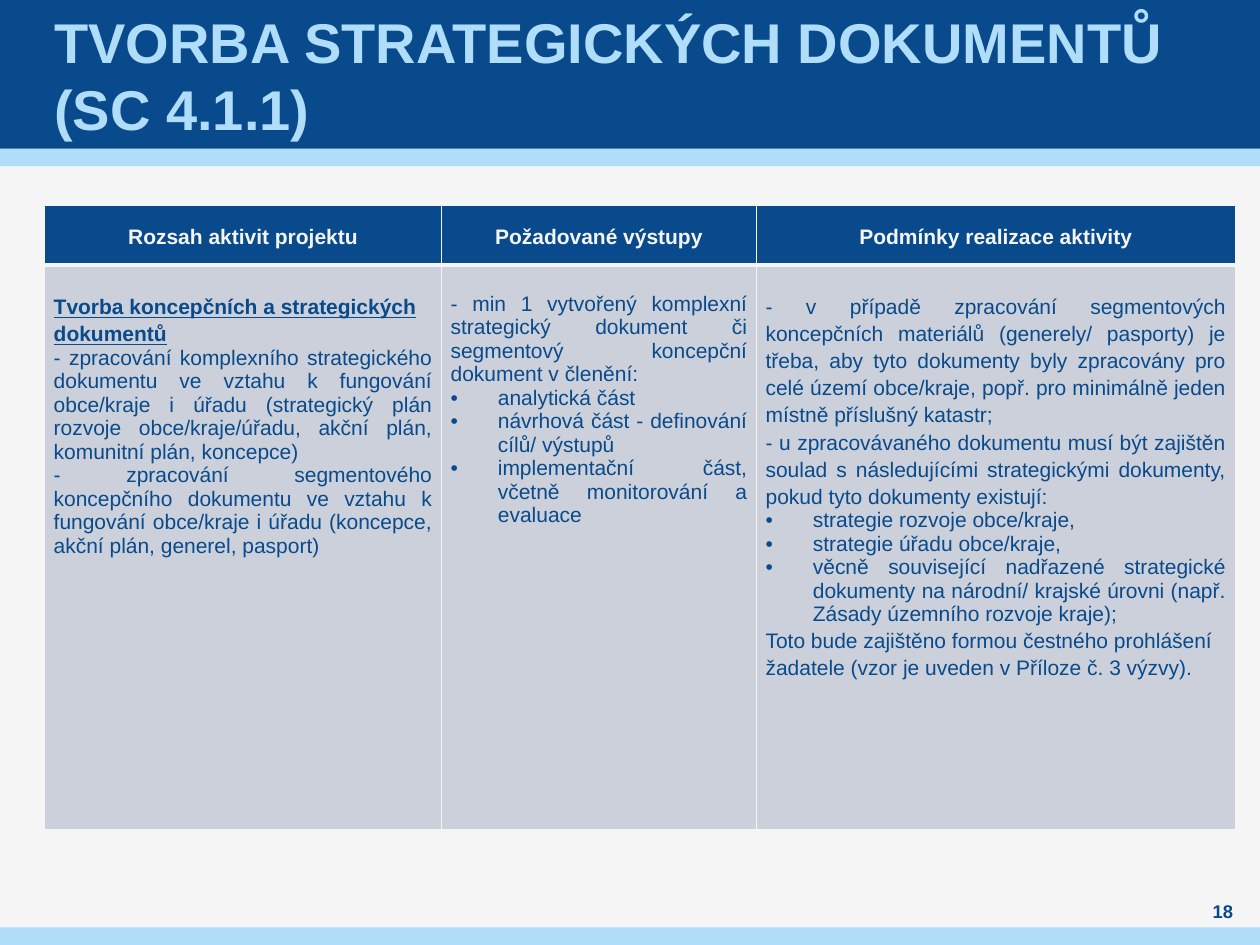
import pptx
import pptx.util
import pptx.dml.color
import pptx.enum.shapes
import pptx.enum.text
import pptx.oxml.ns
import lxml.etree

Pt = pptx.util.Pt
RGB = pptx.dml.color.RGBColor.from_string
ALIGN = pptx.enum.text.PP_ALIGN
MIDDLE = pptx.enum.text.MSO_ANCHOR.MIDDLE
qn = pptx.oxml.ns.qn
COLORS = {"navy": "084A8B", "sky": "AFDDFA", "paper": "F5F5F5", "cell": "CCD0DA"}


def write(paragraph, text, size=12, color="navy", bold=False, underline=False,
          align=ALIGN.LEFT, spacing=1.0, bullet=False):
    paragraph.alignment = align
    paragraph.line_spacing = spacing
    run = paragraph.add_run()
    run.text = text
    run.font.name = "Arial"
    run.font.size = Pt(size)
    run.font.bold = bold
    run.font.underline = underline
    run.font.color.rgb = RGB(COLORS[color])
    if bullet:
        properties = paragraph._p.get_or_add_pPr()
        properties.set("marL", str(Pt(27)))
        properties.set("indent", str(-Pt(27)))
        lxml.etree.SubElement(properties, qn("a:buFont"), typeface="Arial")
        lxml.etree.SubElement(properties, qn("a:buChar"), char="•")


def format_cell(cell, fill, bottom_width, top_width):
    cell.margin_left = cell.margin_right = Pt(5.2)
    cell.margin_top = cell.margin_bottom = 0
    properties = cell._tc.get_or_add_tcPr()
    for side, width in (("L", 1), ("R", 1), ("T", top_width), ("B", bottom_width)):
        line = lxml.etree.SubElement(properties, qn(f"a:ln{side}"), w=str(Pt(width)))
        solid = lxml.etree.SubElement(line, qn("a:solidFill"))
        lxml.etree.SubElement(solid, qn("a:srgbClr"), val=COLORS["paper"])
    cell.fill.solid()
    cell.fill.fore_color.rgb = RGB(COLORS[fill])


presentation = pptx.Presentation()
presentation.slide_width, presentation.slide_height = Pt(720), Pt(540)
slide = presentation.slides.add_slide(presentation.slide_layouts[5])
slide.background.fill.solid()
slide.background.fill.fore_color.rgb = RGB(COLORS["paper"])

# Header and footer bands
for top, height, color in ((85, 10, "sky"), (0, 85, "navy"), (530, 10, "sky")):
    band = slide.shapes.add_shape(pptx.enum.shapes.MSO_SHAPE.RECTANGLE,
                                  0, Pt(top), Pt(720), Pt(height))
    band.shadow.inherit = False
    band.fill.solid()
    band.fill.fore_color.rgb = RGB(COLORS[color])
    band.line.fill.background()

# Title, raised above the bands
heading = slide.shapes.title
heading.element.getparent().append(heading.element)
heading.left, heading.top, heading.width, heading.height = Pt(28), 0, Pt(663), Pt(85)
heading_text = heading.text_frame
heading_text.word_wrap = True
heading_text.auto_size = pptx.enum.text.MSO_AUTO_SIZE.NONE
heading_text.vertical_anchor = MIDDLE
heading_text.margin_left = heading_text.margin_right = Pt(3)
heading_text.margin_top = heading_text.margin_bottom = 0
write(heading_text.paragraphs[0], "TVORBA STRATEGICKÝCH DOKUMENTŮ (SC 4.1.1)",
      size=32, color="sky", bold=True)

# Table content: column heading, width, paragraphs with their formats
loose = {"spacing": 1.15}
justified = {"align": ALIGN.JUSTIFY}
loose_justified = {**loose, **justified}
bulleted = {**justified, "bullet": True}
columns = [
    ("Rozsah aktivit projektu", 226.8, [
        ("Tvorba koncepčních a strategických dokumentů",
         {**loose, "bold": True, "underline": True}),
        ("- zpracování komplexního strategického dokumentu ve vztahu k fungování "
         "obce/kraje i úřadu (strategický plán rozvoje obce/kraje/úřadu, akční plán, "
         "komunitní plán, koncepce)", justified),
        ("- zpracování segmentového koncepčního dokumentu ve vztahu k fungování "
         "obce/kraje i úřadu (koncepce, akční plán, generel, pasport)", justified),
    ]),
    ("Požadované výstupy", 180, [
        ("- min 1 vytvořený komplexní strategický dokument či segmentový koncepční "
         "dokument v členění:", justified),
        ("analytická část", bulleted),
        ("návrhová část - definování cílů/ výstupů", bulleted),
        ("implementační část, včetně monitorování a evaluace", bulleted),
    ]),
    ("Podmínky realizace aktivity", 273.6, [
        ("- v případě zpracování segmentových koncepčních materiálů (generely/ "
         "pasporty) je třeba, aby tyto dokumenty byly zpracovány pro celé území "
         "obce/kraje, popř. pro minimálně jeden místně příslušný katastr;",
         loose_justified),
        ("- u zpracovávaného dokumentu musí být zajištěn soulad s následujícími "
         "strategickými dokumenty, pokud tyto dokumenty existují:", loose_justified),
        ("strategie rozvoje obce/kraje,", bulleted),
        ("strategie úřadu obce/kraje,", bulleted),
        ("věcně související nadřazené strategické dokumenty na národní/ krajské "
         "úrovni (např. Zásady územního rozvoje kraje);", bulleted),
        ("Toto bude zajištěno formou čestného prohlášení žadatele (vzor je uveden "
         "v Příloze č. 3 výzvy).", loose),
    ]),
]

# Activities table
activities = slide.shapes.add_table(2, len(columns), Pt(25.5), Pt(117),
                                    Pt(680.4), Pt(357)).table
activities.horz_banding = False
activities.rows[0].height, activities.rows[1].height = Pt(34.5), Pt(322.5)
for index, (label, width, entries) in enumerate(columns):
    activities.columns[index].width = Pt(width)
    label_cell = activities.cell(0, index)
    format_cell(label_cell, "navy", bottom_width=3, top_width=1)
    label_cell.vertical_anchor = MIDDLE
    write(label_cell.text_frame.paragraphs[0], label, color="paper", bold=True,
          align=ALIGN.CENTER, spacing=1.15)

    detail_cell = activities.cell(1, index)
    format_cell(detail_cell, "cell", bottom_width=1, top_width=3)
    detail_cell.margin_top = Pt(15.5)
    details = detail_cell.text_frame
    for number, (text, text_format) in enumerate(entries):
        paragraph = details.add_paragraph() if number else details.paragraphs[0]
        write(paragraph, text, **text_format)

# Page number
page_number = slide.shapes.add_textbox(Pt(680.4), Pt(513.4), Pt(36.7), Pt(14.4)).text_frame
page_number.word_wrap = True
page_number.vertical_anchor = MIDDLE
page_number.margin_left = page_number.margin_right = 0
page_number.margin_top = page_number.margin_bottom = 0
write(page_number.paragraphs[0], "18", size=10.5, bold=True, align=ALIGN.CENTER)

presentation.save("out.pptx")
